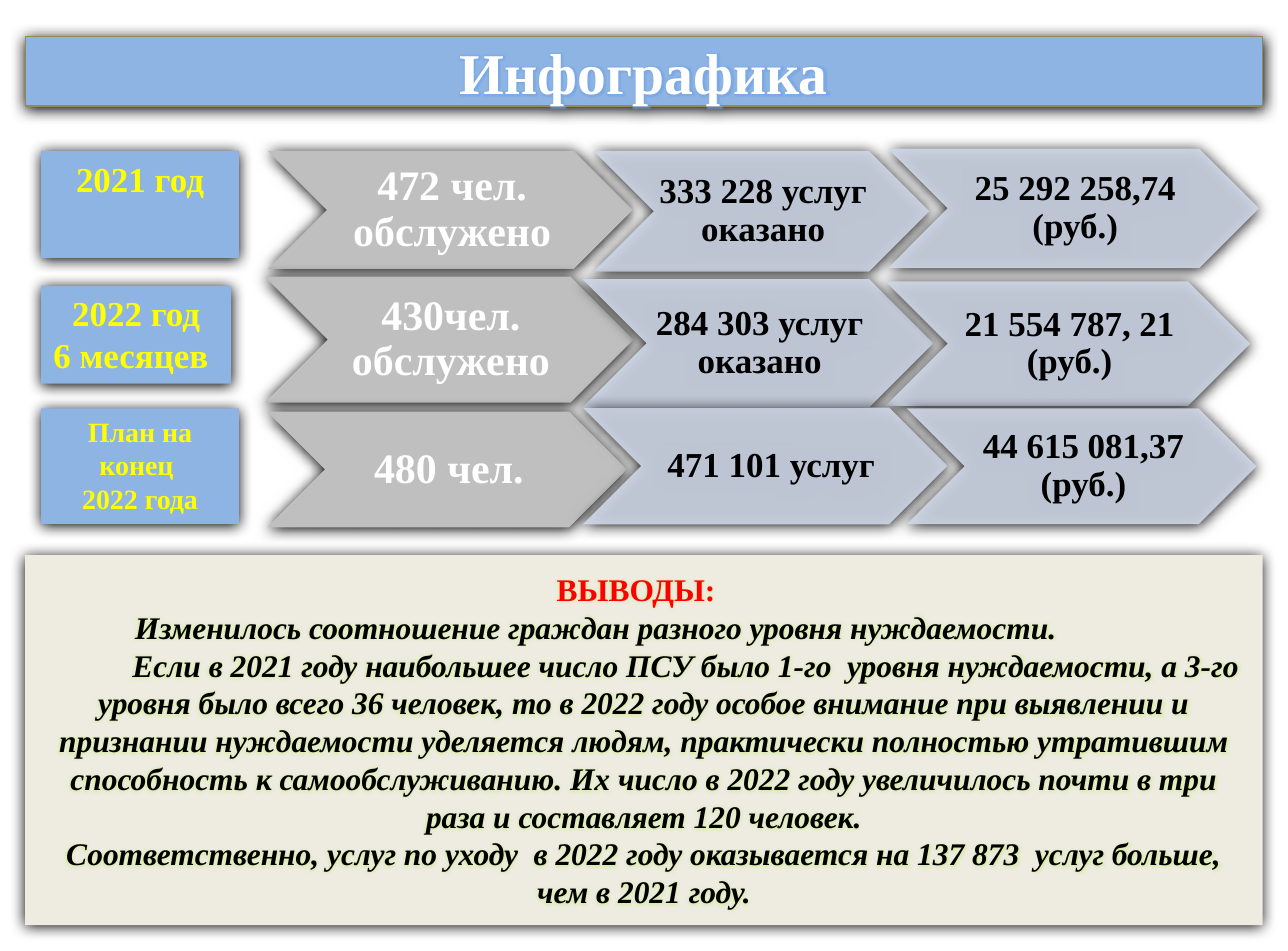
from dataclasses import dataclass

from lxml.etree import SubElement as Sub
from pptx import Presentation
from pptx.dml.color import RGBColor as Rgb
from pptx.enum.shapes import MSO_SHAPE as Kind
from pptx.enum.text import MSO_ANCHOR as Anchor, MSO_AUTO_SIZE as Fit, PP_ALIGN as Align
from pptx.oxml.ns import qn
from pptx.util import Pt


@dataclass(frozen=True)
class Theme:
    font: str = "Times New Roman"
    blue: str = "8EB4E3"
    azure: str = "6FA3E8"
    olive: str = "948A54"
    grey: str = "BFBFBF"
    pale: str = "D0D8E8"
    cream: str = "EEECE1"
    white: str = "FFFFFF"
    black: str = "000000"
    yellow: str = "FFFF00"
    red: str = "FF0000"
    lime: str = "CBEB80"
    head: int = 33
    big: int = 24
    mid: int = 20
    body: int = 18
    small: int = 16


T = Theme()

# Each chevron: left, top, width, height, text
ROWS = [
    [(153.4, 86.4, 208.8, 67.5, "472 чел. обслужено"),
     (339.8, 86.4, 192.2, 69.1, "333 228 услуг оказано"),
     (508.3, 85, 212.4, 68.4, "25 292 258,74 (руб.)")],
    [(151.6, 158.4, 211, 72, "430чел. обслужено"),
     (333.4, 159.8, 200.9, 73.4, "284 303 услуг оказано"),
     (506.9, 161, 208.8, 71.3, "21 554 787, 21 (руб.)")],
    [(153, 235.6, 205.9, 66.2, "480 чел."),
     (333.6, 233.3, 208.8, 66.8, " 471 101 услуг"),
     (519.1, 233.8, 200.2, 66.2, "44 615 081,37 (руб.)")],
]

# Each label: top, width, height, type size, lines with their alignment
LABELS = [
    (86.4, 113.3, 61.2, T.mid, [("2021 год", Align.CENTER)]),
    (163.6, 108.9, 56, T.mid, [("2022 год", Align.CENTER), ("6 месяцев", Align.LEFT)]),
    (233.7, 113.3, 66.2, T.small, [("План на конец ", Align.CENTER), ("2022 года", Align.CENTER)]),
]

# Each paragraph: text, colour, italic, right margin, first-line indent
ENDING = [
    ("ВЫВОДЫ:", T.red, False, 9, 0),
    ("Изменилось соотношение граждан разного уровня нуждаемости.", T.black, True, 55, 0),
    ("Если в 2021 году наибольшее число ПСУ было 1-го  уровня нуждаемости, "
     "а 3-го уровня было всего 36 человек, то в 2022 году особое внимание при "
     "выявлении и признании нуждаемости уделяется людям, практически полностью "
     "утратившим способность к самообслуживанию. Их число в 2022 году увеличилось "
     "почти в три раза и составляет 120 человек.", T.black, True, 0, 48),
    ("Соответственно, услуг по уходу  в 2022 году оказывается на 137 873  услуг "
     "больше, чем в 2021 году.", T.black, True, 0, 0),
]


def tint(node, color, alpha):
    clr = Sub(node, qn("a:srgbClr"), val=color)
    Sub(clr, qn("a:alpha"), val=str(alpha * 1000))


def paint(shape, color):
    """Give a shape its fill, no line and the soft shadow all panels share."""
    shape.fill.solid()
    shape.fill.fore_color.rgb = Rgb.from_string(color)
    shape.line.fill.background()
    shape.shadow.inherit = False
    glow = shape._element.spPr.find(qn("a:effectLst"))
    shade = Sub(glow, qn("a:outerShdw"), blurRad=str(Pt(8.5)), dist=str(Pt(1)),
                dir="5400000", rotWithShape="0")
    tint(shade, T.black, 100)


def frame(shape, anchor, side=7.2, end=3.6):
    text = shape.text_frame
    text.word_wrap = True
    text.auto_size = Fit.NONE
    text.vertical_anchor = anchor
    text.margin_left = text.margin_right = Pt(side)
    text.margin_top = text.margin_bottom = Pt(end)
    return text


def write(text, first, words, size, color, align=Align.CENTER, italic=False, halo=None):
    """Add one paragraph with a single bold run."""
    para = text.paragraphs[0] if first else text.add_paragraph()
    para.alignment = align
    run = para.add_run()
    run.text = words
    font = run.font
    font.name, font.size, font.bold, font.italic = T.font, Pt(size), True, italic
    font.color.rgb = Rgb.from_string(color)
    if halo:
        props = run._r.get_or_add_rPr()
        glow = Sub(props, qn("a:effectLst"))
        tint(Sub(glow, qn("a:glow"), rad=str(Pt(4))), halo, 60)
        props.find(qn("a:solidFill")).addnext(glow)
    return para


def panel(slide, kind, box, color):
    shape = slide.shapes.add_shape(kind, *map(Pt, box))
    paint(shape, color)
    return shape


def title(slide, words):
    shape = slide.shapes.title
    shape.left, shape.top, shape.width, shape.height = map(Pt, (14.4, 20.9, 708.5, 39.8))
    paint(shape, T.blue)
    shape.line.color.rgb = Rgb.from_string(T.olive)
    shape.line.width = Pt(0.75)
    write(frame(shape, Anchor.MIDDLE), True, words, T.head, T.white, halo=T.azure)


def arrow(slide, box, words, lead):
    """Draw a chevron; the lead one of a row is grey with larger white text."""
    fill, size, color = (T.grey, T.big, T.white) if lead else (T.pale, T.mid, T.black)
    shape = panel(slide, Kind.CHEVRON, box, fill)
    if not lead:
        clr = shape._element.spPr.find(qn("a:solidFill"))[0]
        Sub(clr, qn("a:alpha"), val="90000")
    text = frame(shape, Anchor.MIDDLE, 2, 1)
    text.margin_right = 0
    write(text, True, words, size, color).line_spacing = 0.9


def label(slide, top, width, height, size, lines):
    shape = panel(slide, Kind.RECTANGLE, (23.5, top, width, height), T.blue)
    text = frame(shape, Anchor.TOP)
    for i, (words, align) in enumerate(lines):
        write(text, i == 0, words, size, T.yellow, align)


def ending(slide):
    shape = panel(slide, Kind.RECTANGLE, (14.4, 317.8, 708.5, 211.7), T.cream)
    text = frame(shape, Anchor.MIDDLE)
    for i, (words, color, italic, right, indent) in enumerate(ENDING):
        para = write(text, i == 0, words, T.body, color, italic=italic, halo=T.lime)
        props = para._p.get_or_add_pPr()
        for name, size in (("marL", 0), ("marR", right), ("indent", indent)):
            props.set(name, str(Pt(size)))


def main():
    deck = Presentation()
    deck.slide_width, deck.slide_height = Pt(737.28), Pt(544.32)
    slide = deck.slides.add_slide(deck.slide_layouts[5])
    title(slide, "Инфографика")
    for row in ROWS:
        for i, (*box, words) in enumerate(row):
            arrow(slide, box, words, i == 0)
    for item in LABELS:
        label(slide, *item)
    ending(slide)
    deck.save("out.pptx")


if __name__ == "__main__":
    main()
